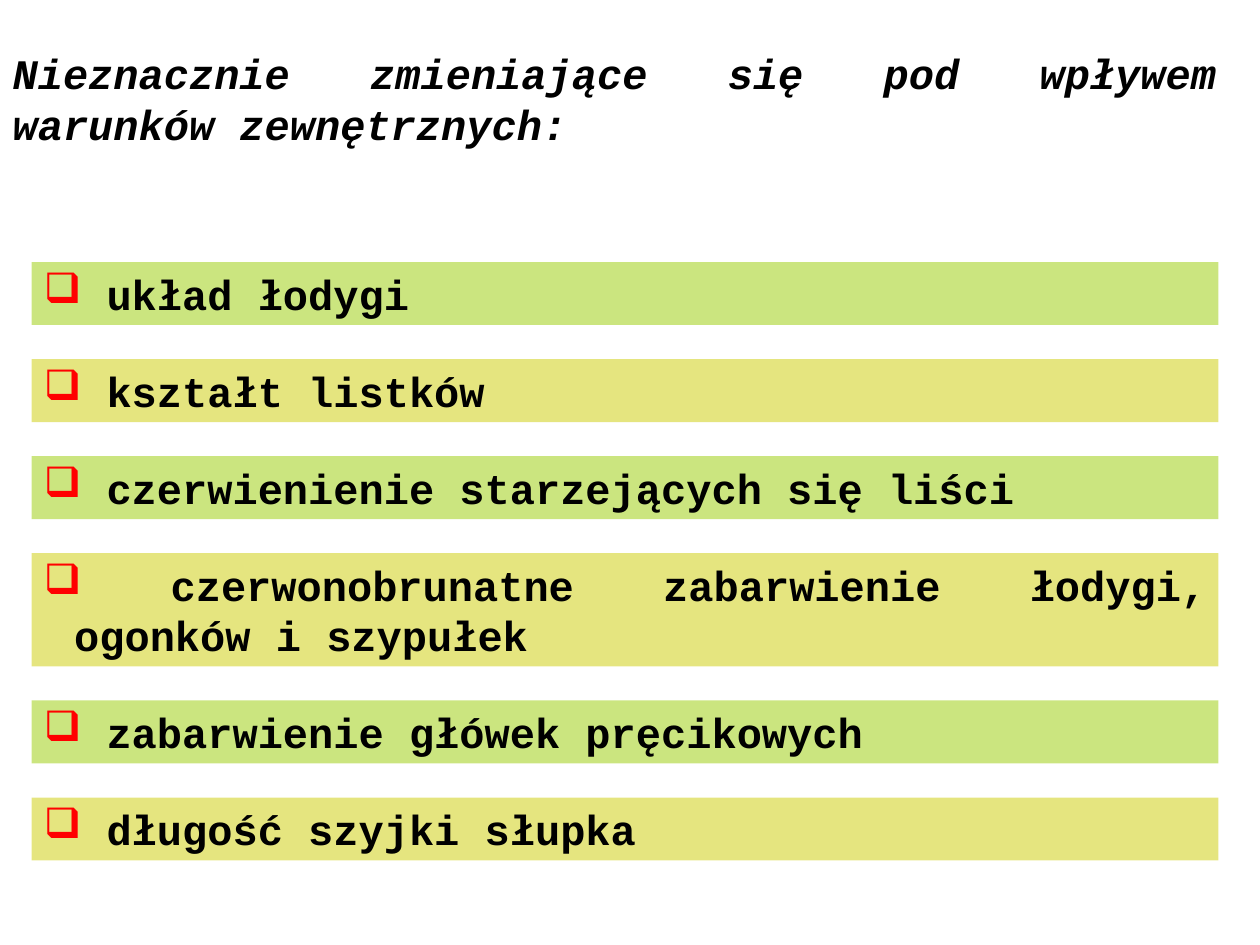
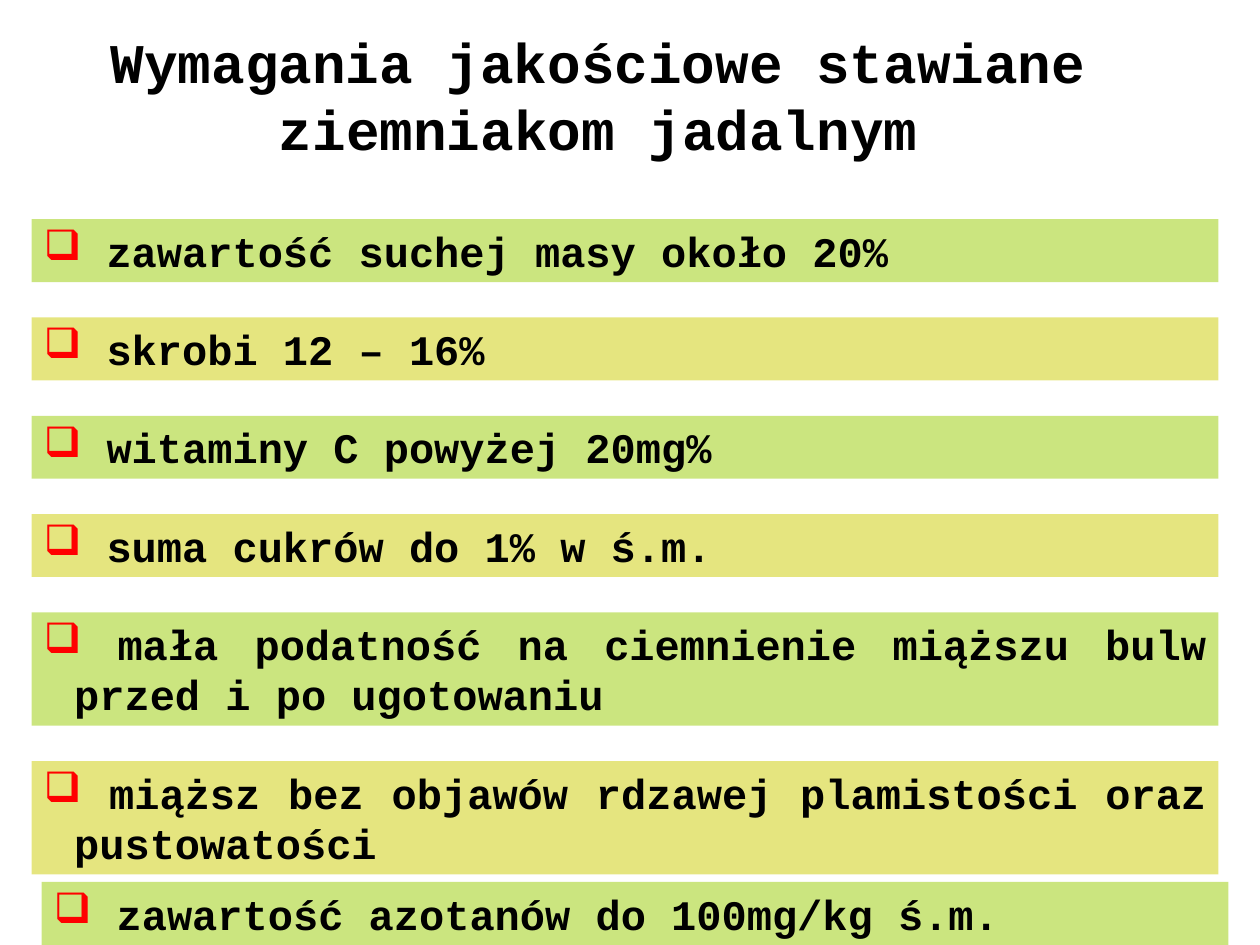
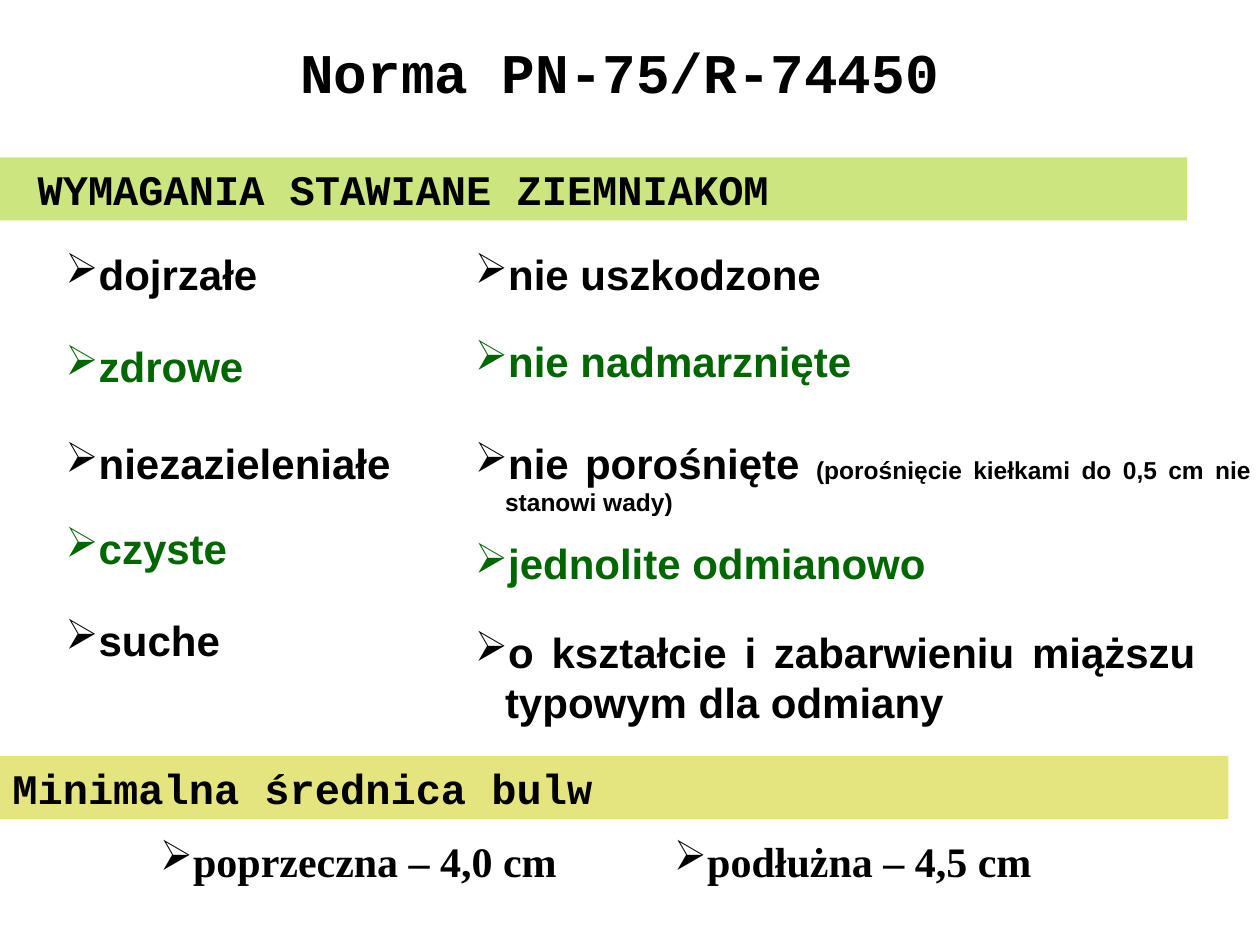
from lxml.etree import SubElement
from pptx import Presentation
from pptx.dml.color import RGBColor
from pptx.enum.shapes import MSO_SHAPE
from pptx.enum.text import MSO_ANCHOR, MSO_AUTO_SIZE, PP_ALIGN
from pptx.oxml.ns import qn
from pptx.util import Inches, Pt

BLACK, RED, DARK_GREEN = "000000", "FF0000", "006600"
BAR_COLOURS = ["99CC00", "CCCC00"]
MONO, SANS, SERIF = "Courier New", "Arial", "Times New Roman"
SQUARE, ARROW = "❑", "➢"
HANG = 0.24
ONE_LINE, TWO_LINES = 0.5, 0.9


def write(box, runs, font=MONO, colour=BLACK, align=PP_ALIGN.JUSTIFY,
          bullet=None, bullet_colour=None, italic=False):
    """Fill the box with one bold paragraph made of (text, size) runs."""
    frame = box.text_frame
    frame.word_wrap = True
    frame.auto_size = MSO_AUTO_SIZE.SHAPE_TO_FIT_TEXT
    frame.vertical_anchor = MSO_ANCHOR.TOP
    para = frame.paragraphs[0]
    para.alignment = align
    properties = para._p.get_or_add_pPr()
    space_before = SubElement(properties, qn("a:spcBef"))
    SubElement(space_before, qn("a:spcPct"), val="50000")
    if bullet:
        properties.set("marL", str(Inches(HANG)))
        properties.set("indent", str(-Inches(HANG)))
        if bullet_colour:
            colour_tag = SubElement(properties, qn("a:buClr"))
            SubElement(colour_tag, qn("a:srgbClr"), val=bullet_colour)
        SubElement(properties, qn("a:buChar"), char=bullet)
    for text, size in runs:
        span = para.add_run()
        span.text = text
        span.font.name = font
        span.font.size = Pt(size)
        span.font.bold = True
        span.font.italic = italic
        span.font.color.rgb = RGBColor.from_string(colour)


def add_bar(page, text, left, top, width, height, colour, bullet=None):
    """Add a half-transparent band with its text."""
    bar = page.shapes.add_shape(MSO_SHAPE.RECTANGLE, Inches(left), Inches(top),
                                Inches(width), Inches(height))
    bar.shadow.inherit = False
    bar.line.fill.background()
    bar.fill.solid()
    bar.fill.fore_color.rgb = RGBColor.from_string(colour)
    fill_colour = bar._element.spPr.find(qn("a:solidFill"))[0]
    SubElement(fill_colour, qn("a:alpha"), val="50000")
    write(bar, [(text, 24)], bullet=bullet, bullet_colour=RED)


deck = Presentation()
deck.slide_width, deck.slide_height = Inches(10), Inches(7.5)

# Titles: text, size, left, top, width, height, alignment, italic
titles = [
    ("Nieznacznie zmieniające się pod wpływem warunków zewnętrznych:",
     24, 0, 0.33, 9.75, 0.9, PP_ALIGN.JUSTIFY, True),
    ("Wymagania jakościowe stawiane ziemniakom jadalnym",
     32, 0.5, 0.17, 8.5, 1.17, PP_ALIGN.CENTER, False),
    ("Norma PN-75/R-74450", 32, 0.67, 0.25, 8.5, 0.63, PP_ALIGN.CENTER, False),
]
pages = []
for text, size, left, top, width, height, align, italic in titles:
    page = deck.slides.add_slide(deck.slide_layouts[5])
    title = page.shapes.title
    title.left, title.top = Inches(left), Inches(top)
    title.width, title.height = Inches(width), Inches(height)
    write(title, [(text, size)], align=align, italic=italic)
    pages.append(page)
traits_page, quality_page, norm_page = pages

# Stacks of bars in alternating colours
traits = [
    (" układ łodygi", ONE_LINE),
    (" kształt listków", ONE_LINE),
    (" czerwienienie starzejących się liści", ONE_LINE),
    (" czerwonobrunatne zabarwienie łodygi, ogonków i szypułek", TWO_LINES),
    (" zabarwienie główek pręcikowych", ONE_LINE),
    (" długość szyjki słupka", ONE_LINE),
]
qualities = [
    (" zawartość suchej masy około 20%", ONE_LINE),
    (" skrobi 12 – 16%", ONE_LINE),
    (" witaminy C powyżej 20mg%", ONE_LINE),
    (" suma cukrów do 1% w ś.m.", ONE_LINE),
    (" mała podatność na ciemnienie miąższu bulw przed i po ugotowaniu", TWO_LINES),
    (" miąższ bez objawów rdzawej plamistości oraz pustowatości", TWO_LINES),
]
for page, items, top, gap in [(traits_page, traits, 2.08, 0.27),
                              (quality_page, qualities, 1.74, 0.28)]:
    for index, (text, height) in enumerate(items):
        add_bar(page, text, 0.25, top, 9.42, height, BAR_COLOURS[index % 2], SQUARE)
        top += height + gap
add_bar(quality_page, " zawartość azotanów do 100mg/kg ś.m.",
        0.33, 7, 9.42, ONE_LINE, BAR_COLOURS[0], SQUARE)

# Potato norm: two headed sections
add_bar(norm_page, " WYMAGANIA STAWIANE ZIEMNIAKOM", 0, 1.25, 9.42, ONE_LINE, BAR_COLOURS[0])
add_bar(norm_page, "Minimalna średnica bulw", 0, 6, 9.75, ONE_LINE, BAR_COLOURS[1])

# Columns: left, font, alignment, then items of runs, top, width, height, right inset
columns = [
    (0.42, SANS, PP_ALIGN.LEFT, [
        ([("dojrzałe", 24)], 1.92, 2, ONE_LINE, 0.1),
        ([("zdrowe", 24)], 2.65, 2.08, ONE_LINE, 0.1),
        ([("niezazieleniałe", 24)], 3.42, 2.92, ONE_LINE, 0.1),
        ([("czyste", 24)], 4.1, 2.42, ONE_LINE, 0.1),
        ([("suche", 24)], 4.83, 1.83, ONE_LINE, 0.1),
    ]),
    (3.67, SANS, PP_ALIGN.JUSTIFY, [
        ([("nie uszkodzone", 24)], 1.92, 3.08, ONE_LINE, 0.1),
        ([("nie nadmarznięte", 24)], 2.61, 3.42, ONE_LINE, 0.1),
        ([("nie porośnięte ", 24),
          ("(porośnięcie kiełkami do 0,5 cm nie stanowi wady)", 14)],
         3.42, 6.58, 0.73, 0.32),
        ([("jednolite odmianowo", 24)], 4.22, 4.5, ONE_LINE, 0.1),
        ([("o kształcie i zabarwieniu miąższu typowym dla odmiany", 24)],
         4.92, 6, TWO_LINES, 0.18),
    ]),
    (1.17, SERIF, PP_ALIGN.LEFT, [([("poprzeczna – 4,0 cm", 24)], 6.58, 3.5, ONE_LINE, 0.1)]),
    (5.25, SERIF, PP_ALIGN.LEFT, [([("podłużna – 4,5 cm", 24)], 6.58, 3.5, ONE_LINE, 0.1)]),
]
for left, font, align, items in columns:
    for index, (runs, top, width, height, inset) in enumerate(items):
        box = norm_page.shapes.add_textbox(Inches(left), Inches(top),
                                           Inches(width), Inches(height))
        box.text_frame.margin_right = Inches(inset)
        write(box, runs, font, [BLACK, DARK_GREEN][index % 2], align, ARROW)

deck.save("out.pptx")
